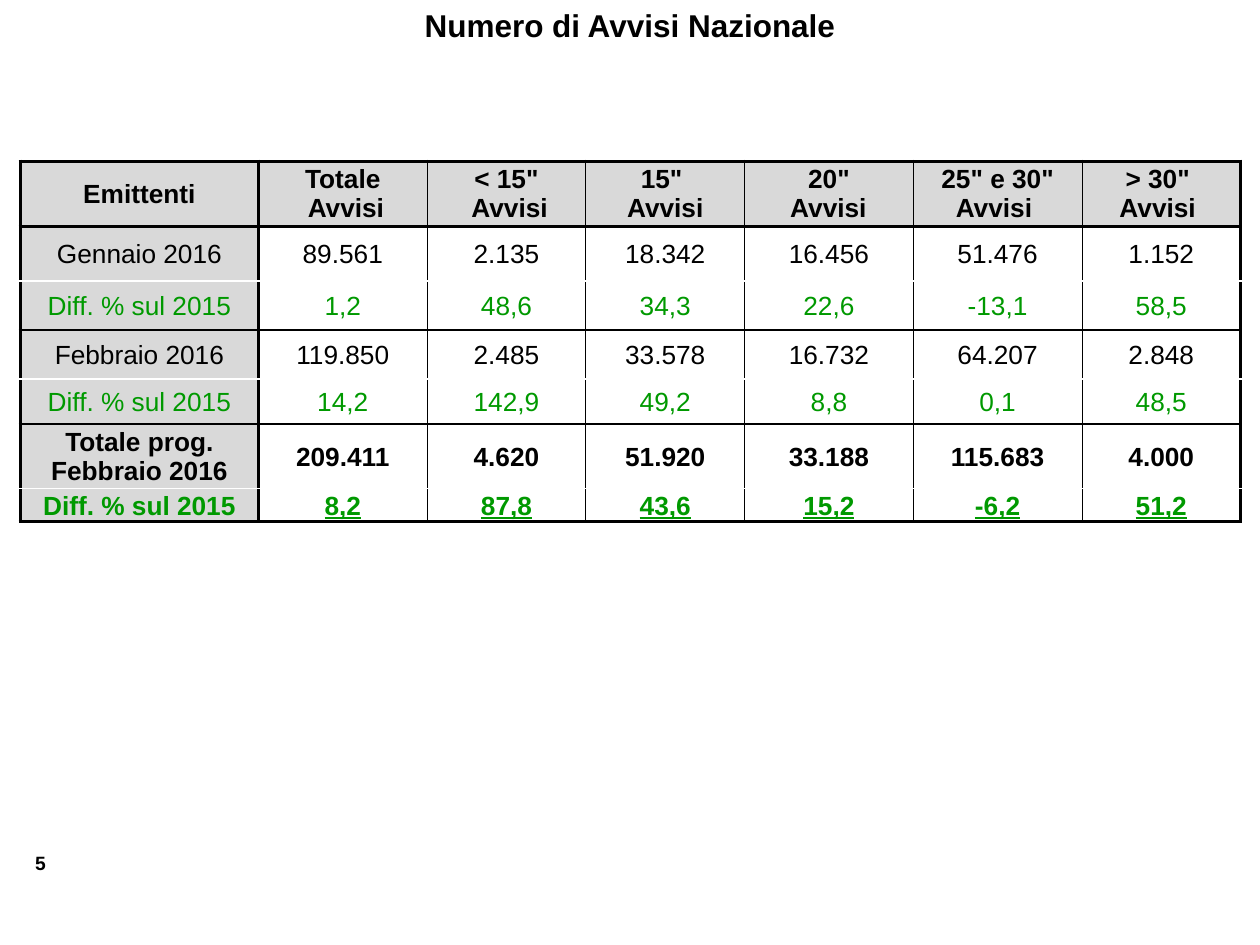
from dataclasses import dataclass

from lxml import etree
from pptx import Presentation
from pptx import util as u
from pptx.dml.color import RGBColor
from pptx.enum import text
from pptx.oxml import ns

HUES = {"ink": "000000", "rule": "FFFFFF", "head": "D9D9D9", "diff": "009900"}


@dataclass
class Row:
    high: float
    cells: list[str]
    hue: str = "ink"
    bold: bool = False
    under: bool = False


@dataclass
class Edge:
    width: float
    hue: str = "ink"


DIFF = "Diff. % sul 2015"
ROWS = [
    Row(1.32, ["Emittenti", "Totale\n Avvisi", '< 15"\n Avvisi', '15" \nAvvisi',
               '20"\n Avvisi ', '25" e 30" Avvisi ', '> 30" \nAvvisi '], bold=True),
    Row(1.09, ["Gennaio 2016", "89.561", "2.135", "18.342", "16.456", "51.476", "1.152"]),
    Row(0.99, [DIFF, "1,2", "48,6", "34,3", "22,6", "-13,1", "58,5"], "diff"),
    Row(0.99, ["Febbraio 2016", "119.850", "2.485", "33.578", "16.732", "64.207", "2.848"]),
    Row(0.91, [DIFF, "14,2", "142,9", "49,2", "8,8", "0,1", "48,5"], "diff"),
    Row(1.3, ["Totale prog. Febbraio 2016", "209.411", "4.620", "51.920", "33.188",
              "115.683", "4.000"], bold=True),
    Row(0.58, [DIFF, "8,2", "87,8", "43,6", "15,2", "-6,2", "51,2"], "diff", True, True),
]
COLS = [4.8, 3.4, 3.2, 3.2, 3.4, 3.4, 3.2]
THICK, THIN, LINE, PALE = Edge(2.25), Edge(0.5), Edge(1), Edge(1, "rule")
ACROSS = [THICK, THICK, PALE, LINE, PALE, LINE, PALE, THICK]
DOWN = [THICK, THICK] + [THIN] * 5 + [THICK]


def add_run(para, words: str, size: float, hue: str = "ink",
            bold: bool = True, under: bool = False) -> None:
    run = para.add_run()
    run.text = words
    font = run.font
    font.name = "Arial"
    font.size = u.Pt(size)
    font.bold = bold
    if under:
        font.underline = True
    font.color.rgb = RGBColor.from_string(HUES[hue])


def add_edge(cell, side: str, edge: Edge) -> None:
    props = cell._tc.get_or_add_tcPr()
    line = etree.SubElement(props, ns.qn(f"a:ln{side}"), w=str(u.Pt(edge.width)))
    fill = etree.SubElement(line, ns.qn("a:solidFill"))
    etree.SubElement(fill, ns.qn("a:srgbClr"), val=HUES[edge.hue])


def fill_cell(cell, row: Row, words: str, shade: bool, pad: float) -> None:
    cell.vertical_anchor = text.MSO_ANCHOR.MIDDLE
    cell.margin_left = cell.margin_right = cell.margin_top = u.Cm(pad)
    cell.margin_bottom = 0
    if shade:
        cell.fill.solid()
        cell.fill.fore_color.rgb = RGBColor.from_string(HUES["head"])
    else:
        cell.fill.background()
    frame = cell.text_frame
    for i, part in enumerate(words.split("\n")):
        para = frame.add_paragraph() if i else frame.paragraphs[0]
        para.alignment = text.PP_ALIGN.CENTER
        add_run(para, part, 15, row.hue, row.bold, row.under and not shade)


def add_grid(slide) -> None:
    high = sum(row.high for row in ROWS)
    table = slide.shapes.add_table(len(ROWS), len(COLS), u.Cm(0.41), u.Cm(3.25),
                                   u.Cm(sum(COLS)), u.Cm(high)).table
    table.first_row = table.horz_banding = False
    for col, width in zip(table.columns, COLS):
        col.width = u.Cm(width)
    for r, row in enumerate(ROWS):
        table.rows[r].height = u.Cm(row.high)
        for c, words in enumerate(row.cells):
            cell = table.cell(r, c)
            for side, edge in (("L", DOWN[c]), ("R", DOWN[c + 1]),
                               ("T", ACROSS[r]), ("B", ACROSS[r + 1])):
                add_edge(cell, side, edge)
            fill_cell(cell, row, words, r == 0 or c == 0, 0.03 if r else 0)


def add_title(slide) -> None:
    title = slide.shapes.title
    title.left = title.top = 0
    title.width, title.height = u.Cm(25.4), u.Cm(1.02)
    frame = title.text_frame
    frame.vertical_anchor = text.MSO_ANCHOR.MIDDLE
    para = frame.paragraphs[0]
    para.alignment = text.PP_ALIGN.CENTER
    add_run(para, "Numero di Avvisi Nazionale", 18)


def add_page(slide) -> None:
    box = slide.shapes.add_textbox(u.Cm(0.46), u.Cm(17.04), u.Cm(1.07), u.Cm(0.74))
    box.text_frame.word_wrap = True
    add_run(box.text_frame.paragraphs[0], "5", 11)


def main() -> None:
    deck = Presentation()
    deck.slide_width, deck.slide_height = u.Cm(25.4), u.Cm(19.05)
    slide = deck.slides.add_slide(deck.slide_layouts[5])
    add_page(slide)
    add_title(slide)
    add_grid(slide)
    deck.save("out.pptx")


if __name__ == "__main__":
    main()
